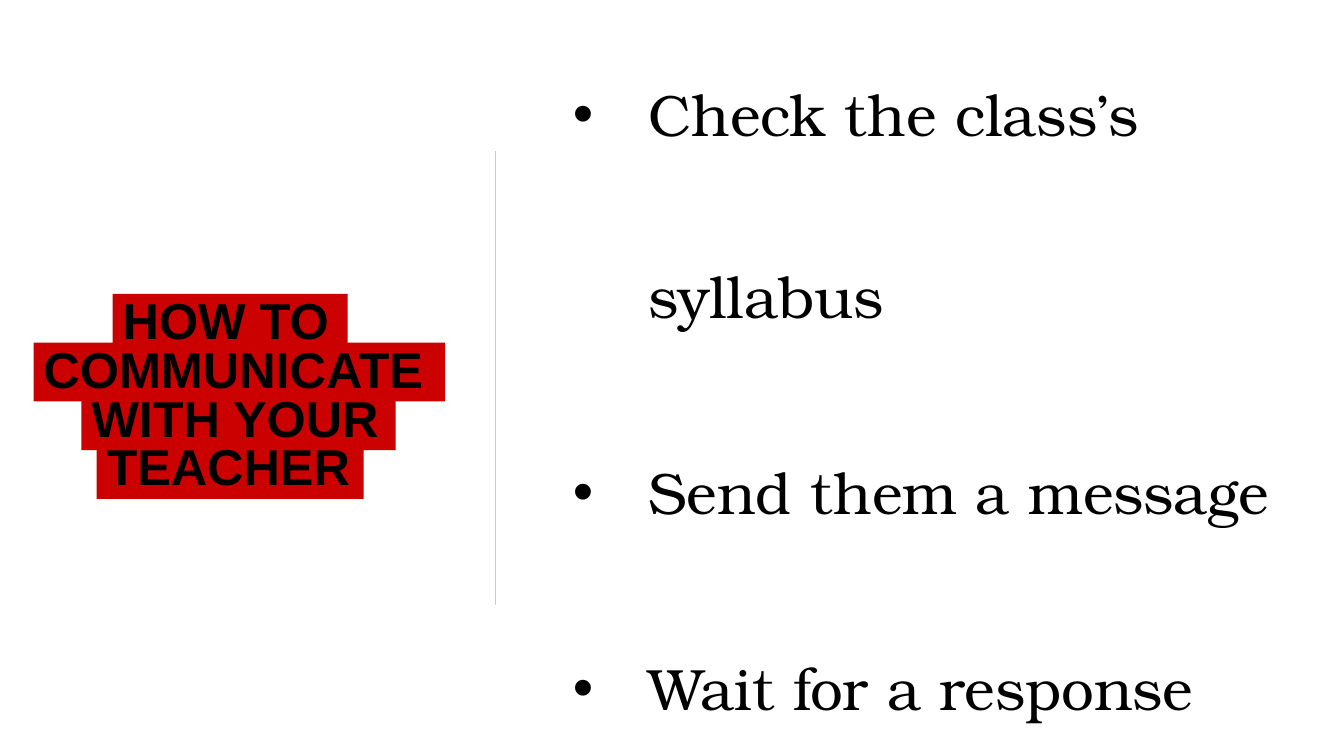
import pptx
import pptx.dml.color
import pptx.enum.shapes
import pptx.enum.text
import pptx.oxml
import pptx.oxml.ns
import pptx.util

RGBColor = pptx.dml.color.RGBColor
Pt = pptx.util.Pt
BLACK = RGBColor(0x00, 0x00, 0x00)
RED = RGBColor(0xCB, 0x00, 0x00)
GREY = RGBColor(0xCB, 0xCC, 0xCB)

EMU_PER_PX = 7620  # 120 px to the inch
HEADING_FONT = {"name": "Arial", "size": Pt(36), "bold": True}
STEP_FONT = {"name": "TeX Gyre Bonum", "size": Pt(41.6), "bold": False}

HEADING_TOP, HEADING_PITCH, HEADING_HEIGHT = 350, 58, 70
HEADING_LINES = [  # text, left, width
    ("HOW TO", 134, 280),
    ("COMMUNICATE", 40, 490),
    ("WITH YOUR", 97, 374),
    ("TEACHER", 115, 318),
]
STEPS = ["Check the class’s syllabus", "Send them a message", "Wait for a response"]


def px(length):
    return pptx.util.Emu(length * EMU_PER_PX)


def apply(target, values):
    for name, value in values.items():
        setattr(target, name, value)


class SlideBuilder:
    def __init__(self, slide):
        self.slide = slide

    def place(self, shape, left, top, width, height):
        apply(shape, {"left": px(left), "top": px(top),
                      "width": px(width), "height": px(height)})

    def fill_text(self, shape, lines, font, line_spacing, hanging=0):
        frame = shape.text_frame
        frame.text = "\n".join(lines)
        apply(frame, {"word_wrap": True,
                      "auto_size": pptx.enum.text.MSO_AUTO_SIZE.NONE,
                      "vertical_anchor": pptx.enum.text.MSO_ANCHOR.MIDDLE})
        for index, paragraph in enumerate(frame.paragraphs):
            if hanging:
                self.bullet(paragraph, px(hanging))
            apply(paragraph, {"alignment": pptx.enum.text.PP_ALIGN.LEFT,
                              "line_spacing": line_spacing,
                              "space_before": Pt(10 if index else 0)})
            for run in paragraph.runs:
                apply(run.font, font)
                run.font.color.rgb = BLACK

    def bullet(self, paragraph, hanging):
        properties = paragraph._p.get_or_add_pPr()
        properties.set("marL", str(hanging))
        properties.set("indent", str(-hanging))
        for tag, key, value in (("a:buFont", "typeface", "Arial"),
                                ("a:buChar", "char", "•")):
            mark = pptx.oxml.parse_xml(f"<{tag} {pptx.oxml.ns.nsdecls('a')}/>")
            mark.set(key, value)
            properties.append(mark)

    def divider(self, x, top, bottom):
        line = self.slide.shapes.add_connector(
            pptx.enum.shapes.MSO_CONNECTOR.STRAIGHT, px(x), px(top), px(x), px(bottom))
        line.line.color.rgb = GREY
        line.line.width = Pt(0.25)
        line._element.spPr.append(
            pptx.oxml.parse_xml(f"<a:effectLst {pptx.oxml.ns.nsdecls('a')}/>"))

    def heading(self, rows):
        """Stack the heading's red bars; the first one is the title."""
        for index, (text, left, width) in enumerate(rows):
            box = (left, HEADING_TOP + index * HEADING_PITCH, width, HEADING_HEIGHT)
            if index == 0:
                bar = self.slide.shapes.title
                self.place(bar, *box)
            else:
                bar = self.slide.shapes.add_shape(
                    pptx.enum.shapes.MSO_SHAPE.RECTANGLE, *map(px, box))
                bar.shadow.inherit = False
                bar.line.fill.background()
            bar.fill.solid()
            bar.fill.fore_color.rgb = RED
            self.fill_text(bar, [text], HEADING_FONT, 0.9)

    def bullet_list(self, items, *box):
        body = self.slide.placeholders[1]
        self.place(body, *box)
        self.fill_text(body, items, STEP_FONT, 2.6, hanging=90)


def main():
    deck = pptx.Presentation()
    apply(deck, {"slide_width": px(1600), "slide_height": px(900)})
    builder = SlideBuilder(deck.slides.add_slide(deck.slide_layouts[1]))
    builder.divider(590, 180, 720)
    builder.heading(HEADING_LINES)
    builder.bullet_list(STEPS, 670, 70, 890, 680)
    deck.save("out.pptx")


if __name__ == "__main__":
    main()
